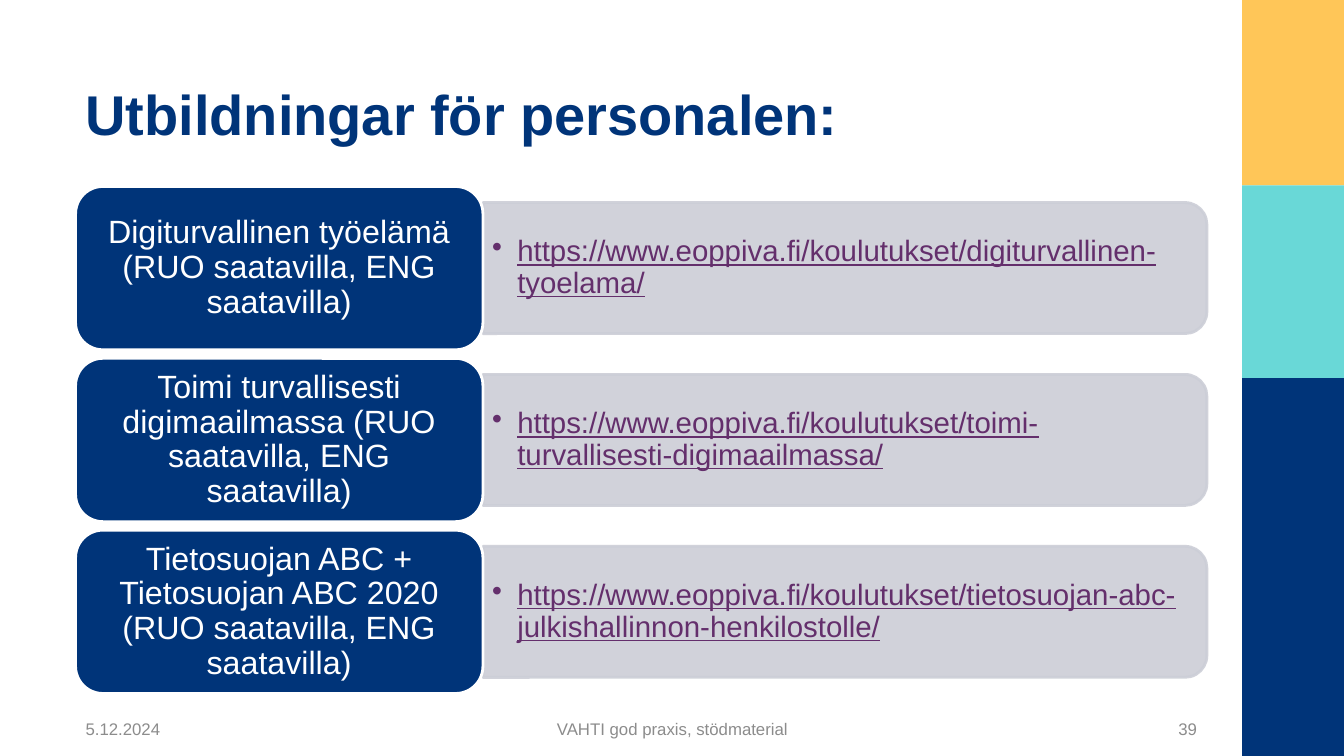
from dataclasses import dataclass

import lxml.etree
import pptx
import pptx.dml.color
import pptx.enum.shapes
import pptx.enum.text
import pptx.oxml.ns
import pptx.shapes.autoshape
import pptx.slide
import pptx.text.text
import pptx.util

RGBColor = pptx.dml.color.RGBColor
Align = pptx.enum.text.PP_ALIGN
Anchor = pptx.enum.text.MSO_ANCHOR
Preset = pptx.enum.shapes.MSO_SHAPE

NAVY = RGBColor(0x00, 0x34, 0x79)
YELLOW = RGBColor(0xFF, 0xC6, 0x58)
TURQUOISE = RGBColor(0x69, 0xD8, 0xD7)
LAVENDER = RGBColor(0xCC, 0xCE, 0xD7)
PURPLE = RGBColor(0x64, 0x2F, 0x6C)
GREY = RGBColor(0x8C, 0x8C, 0x8C)
WHITE = RGBColor(0xFF, 0xFF, 0xFF)

FONT = "Arial"
CELL = pptx.util.Inches(0.1)
COLUMNS, ROWS = 133.3, 75

LEFT = 7.5
LABEL_WIDTH, LABEL_HEIGHT = 40.4, 16.2
PANEL_LEFT = LEFT + LABEL_WIDTH
PANEL_WIDTH, PANEL_HEIGHT = 71.8, 13
LINK_WIDTH, LINK_HEIGHT = 71.2, 11.7
FIRST_ROW_CENTRE, ROW_PITCH = 26.6, 17.05
FOOTER_TOP, FOOTER_HEIGHT = 71.1, 2.4
BAND_LEFT = 123.2
BAND_WIDTH = COLUMNS - BAND_LEFT


@dataclass(frozen=True)
class Area:
    left: float
    top: float
    width: float
    height: float

    def lengths(self) -> tuple[int, int, int, int]:
        return (round(self.left * CELL), round(self.top * CELL),
                round(self.width * CELL), round(self.height * CELL))


@dataclass(frozen=True)
class Style:
    size: float
    color: RGBColor
    align: Align = Align.LEFT
    anchor: Anchor = Anchor.MIDDLE
    bold: bool = False
    underline: bool = False
    line_spacing: float = 1.0
    side_inset: float = 0.1
    end_inset: float = 0.05
    bullet: bool = False


@dataclass(frozen=True)
class Band:
    top: float
    bottom: float
    color: RGBColor


@dataclass(frozen=True)
class Caption:
    area: Area
    text: str
    style: Style


@dataclass(frozen=True)
class Training:
    name: str
    address: str


LABEL_STYLE = Style(23, WHITE, Align.CENTER, line_spacing=0.9)
LINK_STYLE = Style(21, PURPLE, underline=True, line_spacing=0.9,
                   side_inset=0.09, end_inset=0.04, bullet=True)

BANDS = [
    Band(0, 18.4, YELLOW),
    Band(18.4, 37.5, TURQUOISE),
    Band(37.5, ROWS, NAVY),
]

CAPTIONS = [
    Caption(Area(LEFT, 1.6, 112.2, 13.4), "Utbildningar för personalen:",
            Style(40, NAVY, anchor=Anchor.BOTTOM, bold=True)),
    Caption(Area(LEFT, FOOTER_TOP, 16.5, FOOTER_HEIGHT), "5.12.2024",
            Style(12, GREY)),
    Caption(Area(34.9, FOOTER_TOP, 63.6, FOOTER_HEIGHT),
            "VAHTI god praxis, stödmaterial", Style(12, GREY, Align.CENTER)),
    Caption(Area(110.6, FOOTER_TOP, 9.1, FOOTER_HEIGHT), "39",
            Style(12, GREY, Align.RIGHT)),
]

TRAININGS = [
    Training("Digiturvallinen työelämä (RUO saatavilla, ENG saatavilla)",
             "https://www.eoppiva.fi/koulutukset/digiturvallinen-tyoelama/"),
    Training("Toimi turvallisesti digimaailmassa (RUO saatavilla, ENG saatavilla)",
             "https://www.eoppiva.fi/koulutukset/toimi-turvallisesti-digimaailmassa/"),
    Training("Tietosuojan ABC + Tietosuojan ABC 2020 (RUO saatavilla, ENG saatavilla)",
             "https://www.eoppiva.fi/koulutukset/tietosuojan-abc-julkishallinnon-henkilostolle/"),
]


def add_bullet(paragraph: pptx.text.text._Paragraph) -> None:
    properties = paragraph._p.get_or_add_pPr()
    indent = pptx.util.Inches(0.25)
    properties.set("marL", str(indent))
    properties.set("indent", str(-indent))
    bullet = lxml.etree.SubElement(properties, pptx.oxml.ns.qn("a:buChar"))
    bullet.set("char", "•")


def write(text_frame: pptx.text.text.TextFrame, text: str, style: Style) -> None:
    text_frame.text = text
    text_frame.word_wrap = True
    text_frame.vertical_anchor = style.anchor
    text_frame.margin_left = text_frame.margin_right = pptx.util.Inches(style.side_inset)
    text_frame.margin_top = text_frame.margin_bottom = pptx.util.Inches(style.end_inset)
    paragraph = text_frame.paragraphs[0]
    if style.bullet:
        add_bullet(paragraph)
    paragraph.alignment = style.align
    paragraph.line_spacing = style.line_spacing
    font = paragraph.runs[0].font
    font.name = FONT
    font.size = pptx.util.Pt(style.size)
    font.bold = style.bold
    font.underline = style.underline
    font.color.rgb = style.color


def add_caption(slide: pptx.slide.Slide, caption: Caption) -> None:
    text_box = slide.shapes.add_textbox(*caption.area.lengths())
    write(text_box.text_frame, caption.text, caption.style)


def add_filled(slide: pptx.slide.Slide, preset: Preset, area: Area, fill: RGBColor,
               line: RGBColor | None = None) -> pptx.shapes.autoshape.Shape:
    shape = slide.shapes.add_shape(preset, *area.lengths())
    shape.shadow.inherit = False
    shape.fill.solid()
    shape.fill.fore_color.rgb = fill
    if line is None:
        shape.line.fill.background()
    else:
        shape.line.color.rgb = line
        shape.line.width = pptx.util.Pt(2)
    return shape


def make_translucent(shape: pptx.shapes.autoshape.Shape, percent: int) -> None:
    for color in shape._element.spPr.iter(pptx.oxml.ns.qn("a:srgbClr")):
        alpha = lxml.etree.SubElement(color, pptx.oxml.ns.qn("a:alpha"))
        alpha.set("val", str(percent * 1000))


def add_training(slide: pptx.slide.Slide, training: Training, centre: float) -> None:
    panel_centre = PANEL_LEFT + PANEL_WIDTH / 2
    upright = Area(panel_centre - PANEL_HEIGHT / 2, centre - PANEL_WIDTH / 2,
                   PANEL_HEIGHT, PANEL_WIDTH)
    panel = add_filled(slide, Preset.ROUND_2_SAME_RECTANGLE, upright, LAVENDER, LAVENDER)
    panel.rotation = 90
    make_translucent(panel, 90)

    link_area = Area(PANEL_LEFT, centre - LINK_HEIGHT / 2, LINK_WIDTH, LINK_HEIGHT)
    add_caption(slide, Caption(link_area, training.address, LINK_STYLE))

    label_area = Area(LEFT, centre - LABEL_HEIGHT / 2, LABEL_WIDTH, LABEL_HEIGHT)
    label = add_filled(slide, Preset.ROUNDED_RECTANGLE, label_area, NAVY, WHITE)
    write(label.text_frame, training.name, LABEL_STYLE)


def main() -> None:
    presentation = pptx.Presentation()
    presentation.slide_width = round(COLUMNS * CELL)
    presentation.slide_height = round(ROWS * CELL)
    slide = presentation.slides.add_slide(presentation.slide_layouts[6])
    for band in BANDS:
        area = Area(BAND_LEFT, band.top, BAND_WIDTH, band.bottom - band.top)
        add_filled(slide, Preset.RECTANGLE, area, band.color)
    for caption in CAPTIONS:
        add_caption(slide, caption)
    for index, training in enumerate(TRAININGS):
        add_training(slide, training, FIRST_ROW_CENTRE + index * ROW_PITCH)
    presentation.save("out.pptx")


if __name__ == "__main__":
    main()
